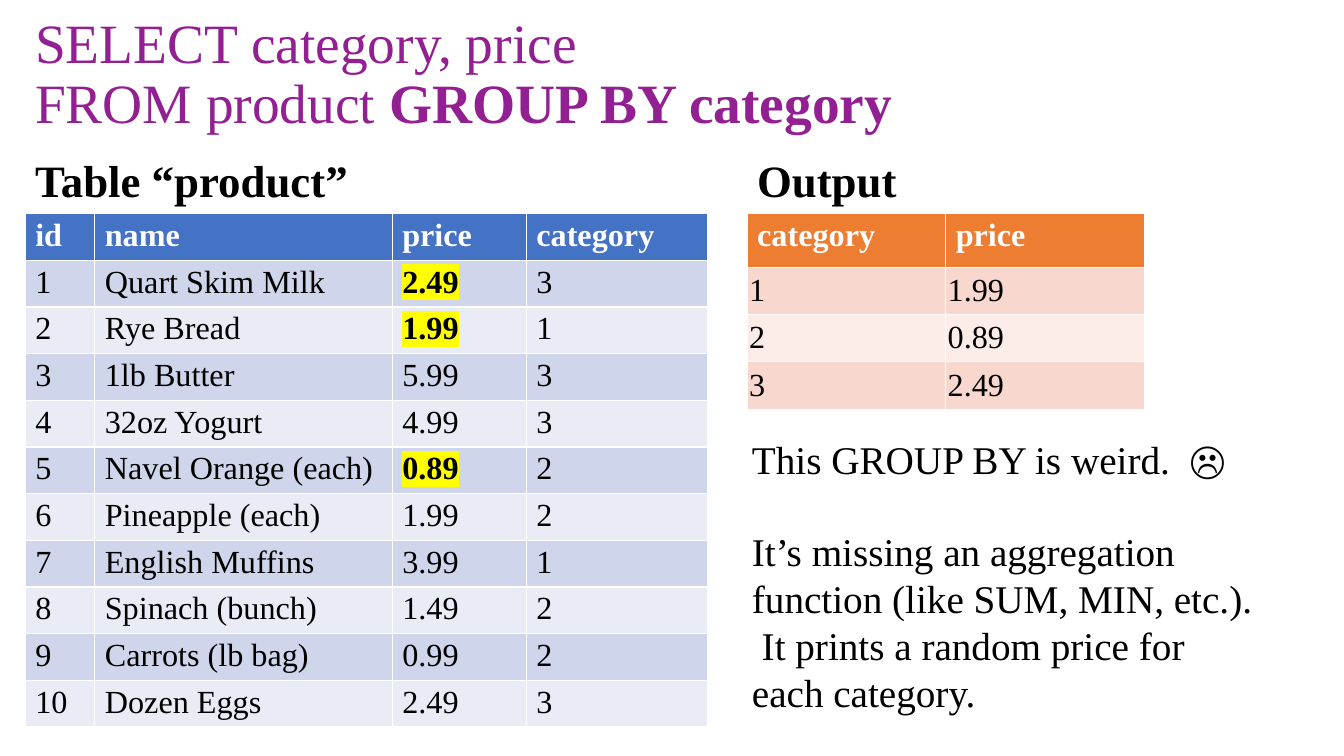
from lxml.etree import SubElement
from pptx import Presentation
from pptx.dml.color import RGBColor
from pptx.enum.text import MSO_ANCHOR
from pptx.oxml.ns import qn
from pptx.util import Inches, Pt

PURPLE = RGBColor(0x93, 0x20, 0x92)
BLACK = RGBColor(0x00, 0x00, 0x00)
WHITE = RGBColor(0xFF, 0xFF, 0xFF)
YELLOW = RGBColor(0xFF, 0xFF, 0x00)
BLUE = RGBColor(0x44, 0x72, 0xC4)
BLUE_BANDS = (RGBColor(0xCF, 0xD5, 0xEA), RGBColor(0xE9, 0xEB, 0xF5))
ORANGE = RGBColor(0xED, 0x7D, 0x31)
ORANGE_BANDS = (RGBColor(0xF8, 0xD7, 0xCE), RGBColor(0xFC, 0xEC, 0xE8))

PRODUCTS = [
    ("id", "name", "price", "category"),
    ("1", "Quart Skim Milk", "2.49", "3"),
    ("2", "Rye Bread", "1.99", "1"),
    ("3", "1lb Butter", "5.99", "3"),
    ("4", "32oz Yogurt", "4.99", "3"),
    ("5", "Navel Orange (each)", "0.89", "2"),
    ("6", "Pineapple (each)", "1.99", "2"),
    ("7", "English Muffins", "3.99", "1"),
    ("8", "Spinach (bunch)", "1.49", "2"),
    ("9", "Carrots (lb bag)", "0.99", "2"),
    ("10", "Dozen Eggs", "2.49", "3"),
]
OUTPUT = [("category", "price"), ("1", "1.99"), ("2", "0.89"), ("3", "2.49")]
PRICE_COLUMN = 2
PICKED_ROWS = (1, 2, 5)


class SlideBuilder:
    font_name = "Times New Roman"
    cell_size = 23

    def __init__(self, slide):
        self.slide = slide

    def style(self, paragraph, size, color, bold=False):
        paragraph.font.name = self.font_name
        paragraph.font.size = Pt(size)
        paragraph.font.color.rgb = color
        paragraph.font.bold = bold

    def text_frame(self, left, top, width, height, anchor=MSO_ANCHOR.TOP):
        box = self.slide.shapes.add_textbox(
            Inches(left), Inches(top), Inches(width), Inches(height))
        frame = box.text_frame
        frame.word_wrap = True
        frame.vertical_anchor = anchor
        return frame

    def title(self, first_line, second_line, clause):
        frame = self.text_frame(0.25, 0.15, 12.85, 1.19, MSO_ANCHOR.MIDDLE)
        query = frame.paragraphs[0]
        self.style(query, 39.6, PURPLE)
        query.line_spacing = 0.9
        query.add_run().text = first_line
        query.add_line_break()
        query.add_run().text = second_line
        grouping = query.add_run()
        grouping.text = clause
        grouping.font.bold = True

    def heading(self, text, left, width):
        frame = self.text_frame(left, 1.52, width, 0.58, MSO_ANCHOR.BOTTOM)
        heading = frame.paragraphs[0]
        heading.text = text
        heading.line_spacing = 0.9
        self.style(heading, 32, BLACK, bold=True)

    def notes(self, texts, left, top, width, height, gap):
        frame = self.text_frame(left, top, width, height)
        for index, text in enumerate(texts):
            remark = frame.add_paragraph() if index else frame.paragraphs[0]
            remark.text = text
            remark.space_before = Pt(gap if index else 0)
            self.style(remark, 28, BLACK)

    def table(self, rows, left, widths, heights, header, bands, inset=None):
        grid = self.slide.shapes.add_table(
            len(rows), len(widths), Inches(left), Inches(2.12),
            Inches(sum(widths)), Inches(sum(heights))).table
        for column, width in zip(grid.columns, widths):
            column.width = Inches(width)
        for index, (values, height) in enumerate(zip(rows, heights)):
            grid.rows[index].height = Inches(height)
            for column, value in enumerate(values):
                cell = grid.cell(index, column)
                cell.margin_top = cell.margin_bottom = Inches(0.04)
                cell.fill.solid()
                cell.fill.fore_color.rgb = bands[(index - 1) % 2] if index else header
                if index and inset:
                    cell.vertical_anchor = MSO_ANCHOR.MIDDLE
                    cell.margin_left = cell.margin_right = Inches(inset)
                    cell.margin_top = cell.margin_bottom = Inches(inset)
                entry = cell.text_frame.paragraphs[0]
                entry.text = value
                self.style(entry, self.cell_size, BLACK if index else WHITE, not index)
        return grid

    def highlight(self, cell):
        entry = cell.text_frame.paragraphs[0]
        entry.font.bold = True
        run = entry.runs[0]
        run.font.bold = True
        marker = SubElement(run._r.get_or_add_rPr(), qn("a:highlight"))
        SubElement(marker, qn("a:srgbClr"), val=str(YELLOW))


def main():
    presentation = Presentation()
    presentation.slide_width = Inches(13.33)
    presentation.slide_height = Inches(7.5)
    builder = SlideBuilder(presentation.slides.add_slide(presentation.slide_layouts[6]))

    builder.title("SELECT category, price", "FROM product ", "GROUP BY category")
    builder.heading("Table “product”", 0.25, 6.3)
    products = builder.table(PRODUCTS, 0.25, (0.69, 2.95, 1.33, 1.8),
                             [0.455] * len(PRODUCTS), BLUE, BLUE_BANDS)
    for row in PICKED_ROWS:
        builder.highlight(products.cell(row, PRICE_COLUMN))

    builder.heading("Output", 7.41, 5.69)
    builder.table(OUTPUT, 7.41, (1.97, 1.97), (0.53, 0.47, 0.47, 0.47),
                  ORANGE, ORANGE_BANDS, inset=0.02)
    builder.notes(
        ("This GROUP BY is weird.  ☹",
         "It’s missing an aggregation function (like SUM, MIN, etc.).  "
         "It prints a random price for each category."),
        7.36, 4.27, 5.17, 2.93, gap=32)

    presentation.save("out.pptx")


if __name__ == "__main__":
    main()
